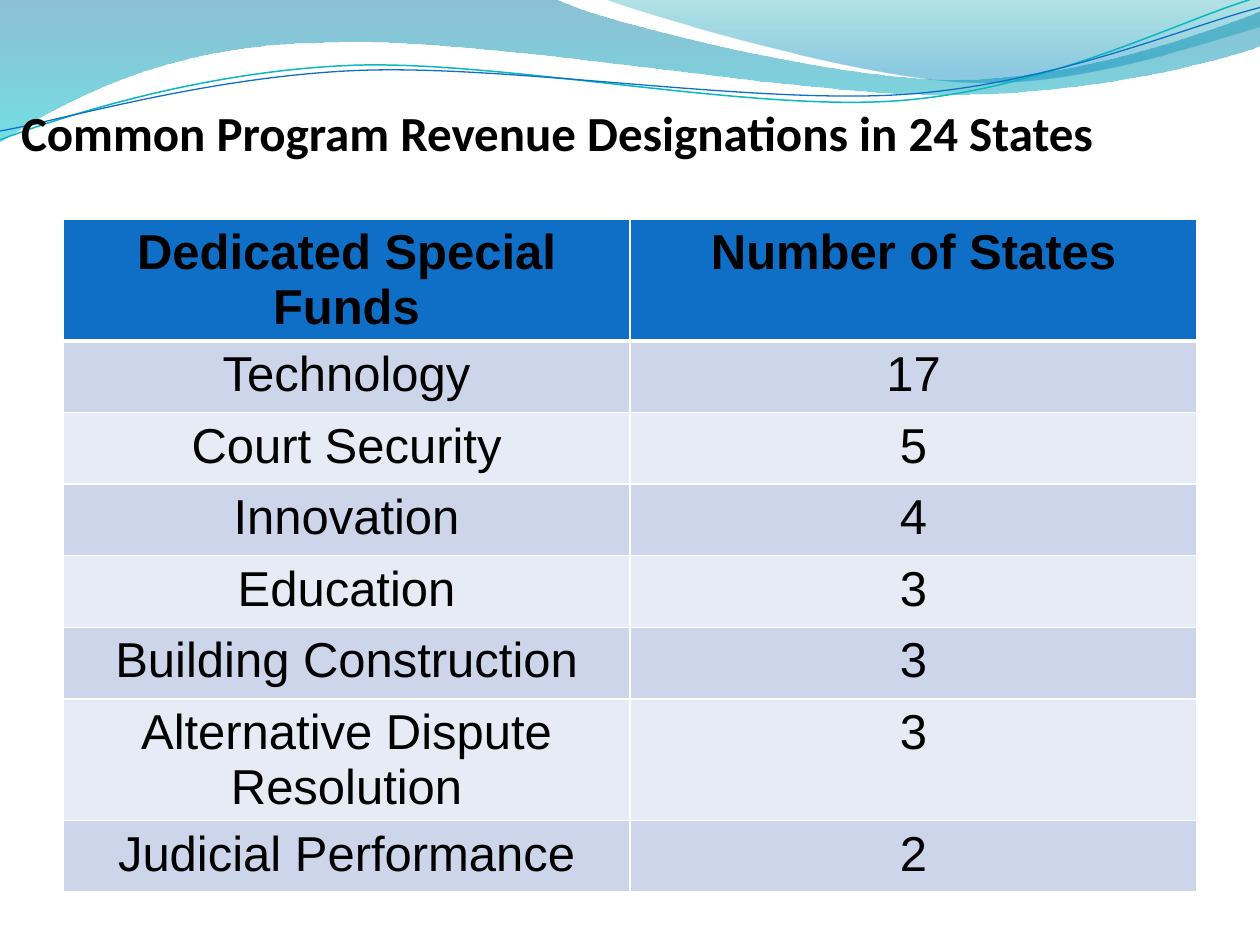
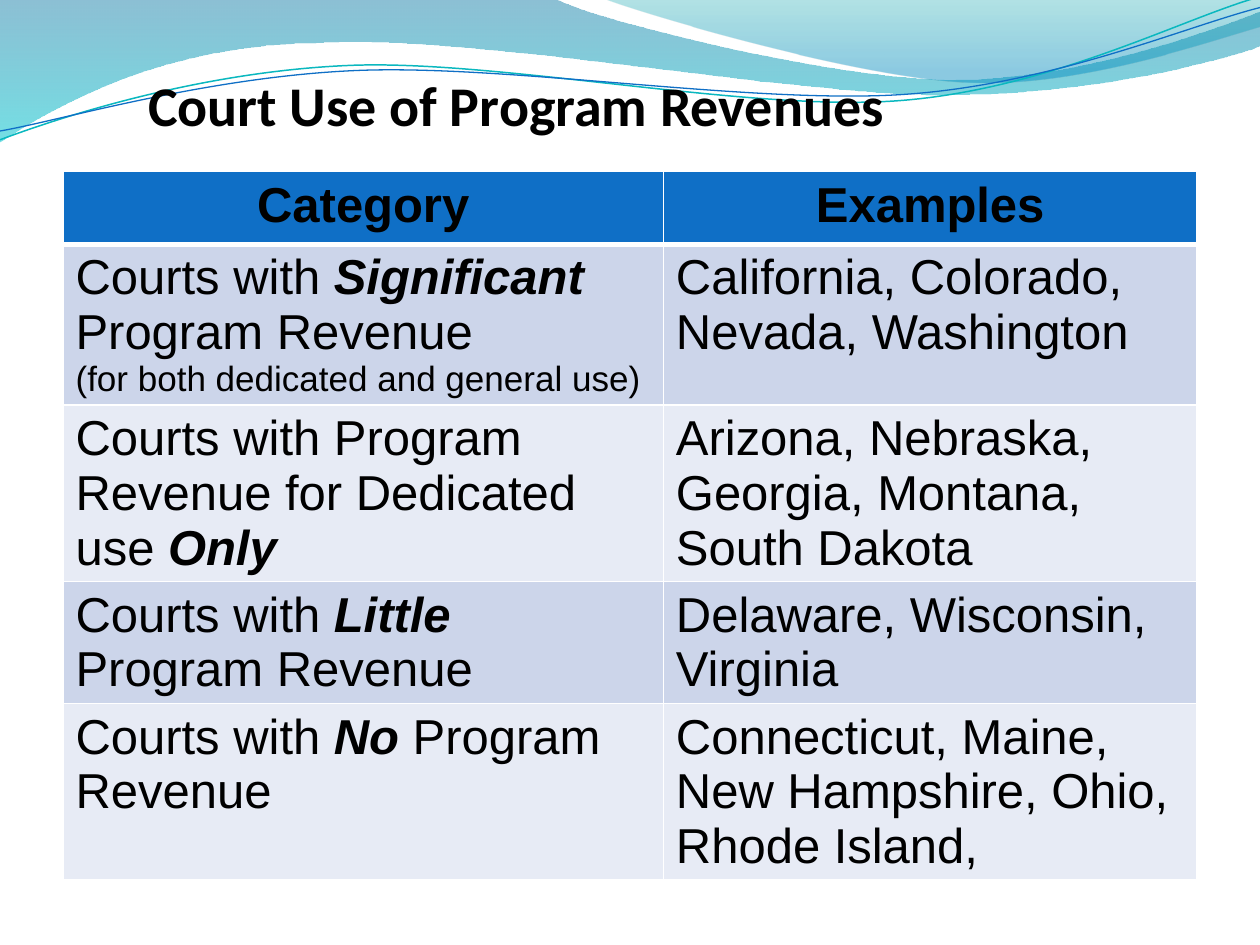
from dataclasses import dataclass

from lxml.etree import SubElement
from pptx import Presentation
from pptx.dml.color import RGBColor
from pptx.enum.text import MSO_ANCHOR, MSO_AUTO_SIZE, PP_ALIGN
from pptx.oxml.ns import qn
from pptx.shapes.autoshape import Shape
from pptx.slide import Slide, SlideLayout
from pptx.table import _Cell
from pptx.util import Inches, Pt

LEFT, MID = PP_ALIGN.LEFT, PP_ALIGN.CENTER
BOTTOM, FIXED = MSO_ANCHOR.BOTTOM, MSO_AUTO_SIZE.NONE

BLACK = RGBColor(0x00, 0x00, 0x00)
WHITE = RGBColor(0xFF, 0xFF, 0xFF)
BLUE = RGBColor(0x0F, 0x6F, 0xC6)
TEAL = RGBColor(0x0A, 0xB8, 0xBF)
DEEP = RGBColor(0x00, 0x74, 0xA1)
AQUA = RGBColor(0x00, 0xC6, 0xCF)
GREEN = RGBColor(0x00, 0xA1, 0xA9)
SKY = RGBColor(0x00, 0x8B, 0xBF)
BANDS = (RGBColor(0xE7, 0xEB, 0xF5), RGBColor(0xCC, 0xD5, 0xEA))

HEAD_FONT, BODY_FONT = "Calibri", "Arial"
BODY_SIZE, NOTE_SIZE = 28, 20
COLS, ROWS = 100, 75
WIDTH, HEIGHT = Inches(10), Inches(7.5)


@dataclass(frozen=True)
class Stop:
    place: float
    color: RGBColor
    alpha: int


@dataclass(frozen=True)
class Wave:
    start: tuple[float, float]
    legs: tuple[tuple[float, ...], ...]
    stops: tuple[Stop, ...] = ()
    color: RGBColor | None = None
    weight: float = 0


@dataclass(frozen=True)
class Page:
    title: str
    box: tuple[float, float, float, float]
    size: int
    align: PP_ALIGN
    top: float
    cols: tuple[float, ...]
    rows: tuple[float, ...]
    body: PP_ALIGN
    cells: tuple[tuple[str, str], ...]


WAVES = (
    Wave((0, -0.1),
         ((44, -0.1), (47.6, 1.7, 66.4, 6.3, 75.8, 6.3),
          (85.3, 6.3, 95.8, 2.6, 100, 0.9), (100.1, 3.6),
          (98.3, 4.4, 87, 7.6, 74.6, 7.5), (62.2, 7.5, 38.2, 2.8, 25.7, 3.4),
          (12.9, 3.5, 4.6, 8.3, -0.1, 11.3), (0, -0.1)),
         (Stop(0, DEEP, 45), Stop(1, AQUA, 55))),
    Wave((47.9, -0.1),
         ((50.9, 1.1, 68.2, 6.2, 76.9, 6.5), (85.6, 6.9, 96.1, 3.2, 100, 2.1),
          (100, 0), (47.9, -0.1)),
         (Stop(0, GREEN, 30), Stop(0.8, SKY, 45))),
    Wave((0, 11.1),
         ((4.8, 9.3, 15.8, 5.7, 27.7, 5.2), (39.5, 4.7, 59.3, 8.9, 71.3, 8),
          (83.3, 7.1, 93.8, 1.5, 99.8, -0.2)),
         color=TEAL, weight=0.85),
    Wave((0, 10.4),
         ((4.7, 9.6, 16.4, 6.1, 28.3, 5.6), (40.3, 5.1, 59.7, 8.3, 71.7, 7.5),
          (83.6, 6.7, 94.1, 2.1, 100, 0.6)),
         color=BLUE, weight=0.75),
)

PAGES = (
    Page("Common Program Revenue Designations in 24 States",
         (1.67, 7.5, 100, 5.3), 28, LEFT, 17.4, (45, 45), (5.68,) * 8, MID,
         (("Dedicated Special Funds", "Number of States"),
          ("Technology", "17"),
          ("Court Security", "5"),
          ("Innovation", "4"),
          ("Education", "3"),
          ("Building Construction", "3"),
          ("Alternative Dispute Resolution", "3"),
          ("Judicial Performance", "2"))),
    Page("Court Use of Program Revenues",
         (0.63, 5.6, 80.7, 5.3), 32, MID, 13.63, (47.65, 42.35),
         (5.76, 10.4, 10.4, 6, 10.4), LEFT,
         (("Category", "Examples"),
          ("Courts with *Significant *Program Revenue\n"
           "(for both dedicated and general use)",
           "California, Colorado, Nevada, Washington"),
          ("Courts with Program Revenue for Dedicated use *Only*",
           "Arizona, Nebraska, Georgia, Montana, South Dakota"),
          ("Courts with *Little* Program Revenue",
           "Delaware, Wisconsin, Virginia"),
          ("Courts with *No* Program Revenue",
           "Connecticut, Maine, New Hampshire, Ohio, Rhode Island,"))),
)


def across(cols: float) -> int:
    return round(WIDTH * cols / COLS)


def down(rows: float) -> int:
    return round(HEIGHT * rows / ROWS)


def bend(shape: Shape, wave: Wave) -> None:
    lines = iter(list(shape.element.iter(qn("a:lnTo"))))
    for leg in wave.legs:
        curve = next(lines)
        if len(leg) == 2:
            continue
        group = [curve, next(lines), next(lines)]
        trail = curve.getparent()
        arc = SubElement(trail, qn("a:cubicBezTo"))
        trail.replace(curve, arc)
        for line in group:
            arc.append(line[0])
        for line in group[1:]:
            trail.remove(line)


def draw_wave(slide: Slide, wave: Wave) -> Shape:
    pen = slide.shapes.build_freeform(across(wave.start[0]),
                                      down(wave.start[1]))
    dots = [(across(leg[i]), down(leg[i + 1]))
            for leg in wave.legs for i in range(0, len(leg), 2)]
    pen.add_line_segments(dots, close=bool(wave.stops))
    shape = pen.convert_to_shape()
    bend(shape, wave)
    shape.shadow.inherit = False
    if not wave.stops:
        shape.fill.background()
        shape.line.color.rgb = wave.color
        shape.line.width = Pt(wave.weight)
        return shape
    shape.line.fill.background()
    shape.fill.gradient()
    shape.fill.gradient_angle = 270
    for mark, stop in zip(shape.fill.gradient_stops, wave.stops):
        mark.position = stop.place
        mark.color.rgb = stop.color
    for tint, stop in zip(shape.element.iter(qn("a:srgbClr")), wave.stops):
        SubElement(tint, qn("a:alpha"), val=str(stop.alpha * 1000))
    return shape


def share_waves(slide: Slide, layout: SlideLayout) -> None:
    for i, wave in enumerate(WAVES):
        item = draw_wave(slide, wave).element
        next(item.iter(qn("p:cNvPr"))).set("id", str(100 + i))
        layout.shapes.element.insert(2 + i, item)


def set_title(slide: Slide, page: Page) -> None:
    title = slide.shapes.title
    x, y, w, h = page.box
    title.left, title.top = across(x), down(y)
    title.width, title.height = across(w), down(h)
    frame = title.text_frame
    frame.text = page.title
    frame.word_wrap, frame.auto_size = True, FIXED
    frame.vertical_anchor = BOTTOM
    frame.margin_left = frame.margin_right = frame.margin_bottom = 0
    frame.margin_top = Inches(0.05)
    line = frame.paragraphs[0]
    line.alignment = page.align
    font = line.runs[0].font
    font.name, font.size, font.bold = HEAD_FONT, Pt(page.size), True
    font.color.rgb = BLACK


def set_edges(cell: _Cell, row: int) -> None:
    props = cell._tc.get_or_add_tcPr()
    heavy = {0: "B", 1: "T"}.get(row)
    for side in "LRTB":
        weight = 3 if side == heavy else 1
        edge = SubElement(props, qn(f"a:ln{side}"), w=str(Pt(weight)))
        fill = SubElement(edge, qn("a:solidFill"))
        SubElement(fill, qn("a:srgbClr"), val=str(WHITE))


def set_cell(cell: _Cell, row: int, text: str, align: PP_ALIGN) -> None:
    set_edges(cell, row)
    cell.fill.solid()
    cell.fill.fore_color.rgb = BANDS[row % 2] if row else BLUE
    frame = cell.text_frame
    frame.text = text
    for i, line in enumerate(frame.paragraphs):
        line.alignment = align if row else MID
        parts = line.text.split("*")
        line.text = parts[0]
        for part in filter(None, parts[1:]):
            line.add_run().text = part
        for j, run in enumerate(line.runs):
            font = run.font
            font.name = BODY_FONT
            font.size = Pt(NOTE_SIZE if i else BODY_SIZE)
            font.bold = row == 0 or j % 2 == 1
            font.italic = j % 2 == 1
            font.color.rgb = BLACK


def add_grid(slide: Slide, page: Page) -> None:
    table = slide.shapes.add_table(
        len(page.rows), len(page.cols), across(5), down(page.top),
        across(sum(page.cols)), down(sum(page.rows))).table
    for col, width in zip(table.columns, page.cols):
        col.width = across(width)
    for r, (height, texts) in enumerate(zip(page.rows, page.cells)):
        table.rows[r].height = down(height)
        for c, text in enumerate(texts):
            set_cell(table.cell(r, c), r, text, page.body)


def main() -> None:
    deck = Presentation()
    deck.slide_width, deck.slide_height = WIDTH, HEIGHT
    layout = deck.slide_layouts.get_by_name("Title Only")
    slides = [deck.slides.add_slide(layout) for _ in PAGES]
    share_waves(slides[0], layout)
    for slide, page in zip(slides, PAGES):
        set_title(slide, page)
        add_grid(slide, page)
    deck.save("out.pptx")


if __name__ == "__main__":
    main()
